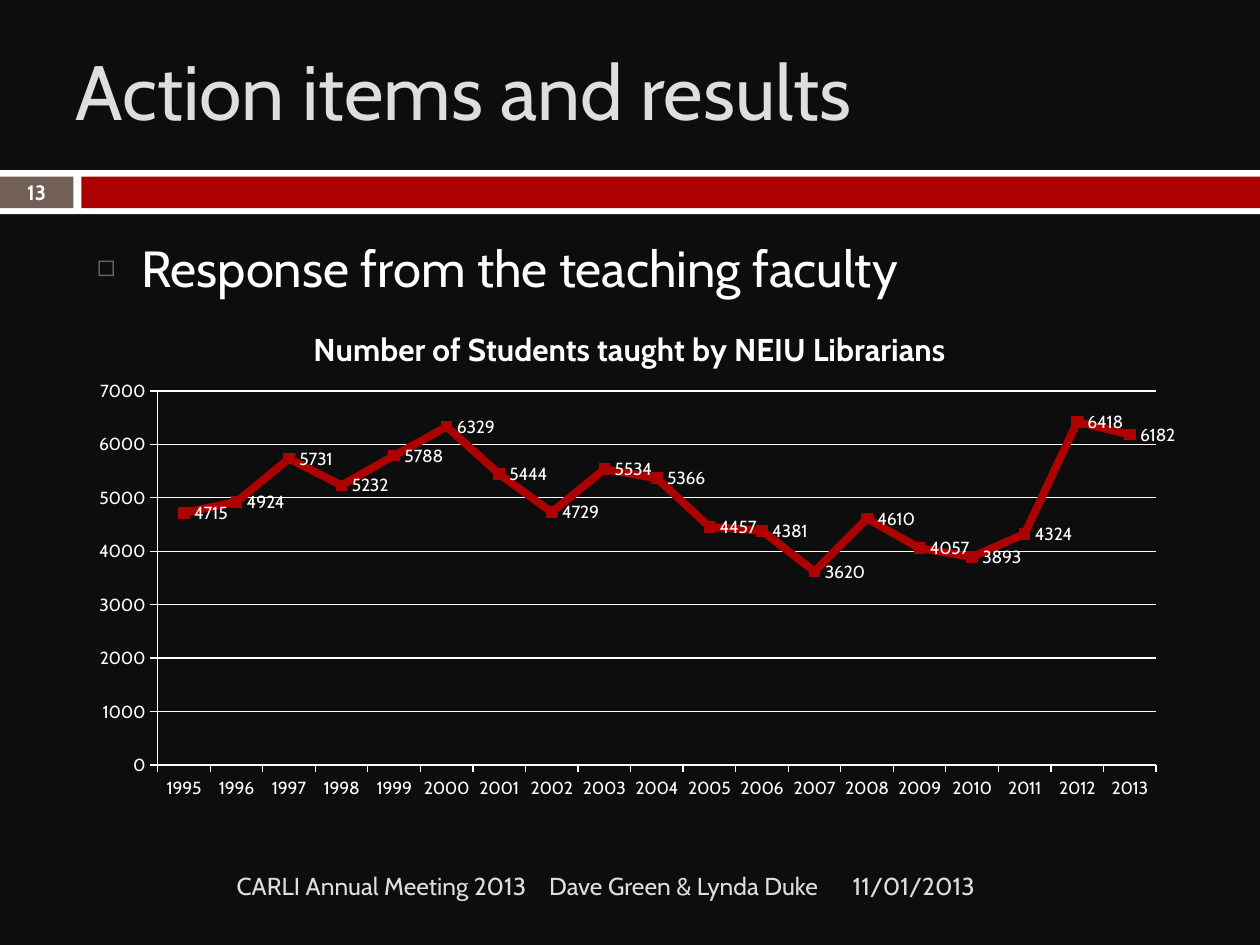
from lxml.etree import SubElement
from pptx import Presentation
from pptx.chart.data import CategoryChartData
from pptx.dml.color import RGBColor
from pptx.enum.chart import XL_CHART_TYPE as ChartType
from pptx.enum.chart import XL_LABEL_POSITION as LabelPosition
from pptx.enum.chart import XL_MARKER_STYLE as MarkerStyle
from pptx.enum.chart import XL_TICK_MARK as TickMark
from pptx.enum.shapes import MSO_SHAPE as ShapeType
from pptx.enum.text import MSO_ANCHOR as Anchor
from pptx.enum.text import MSO_AUTO_SIZE as AutoSize
from pptx.enum.text import PP_ALIGN as Align
from pptx.oxml.ns import qn
from pptx.util import Cm, Pt

FONT = "Cabin"
BLACK = RGBColor(0x0D, 0x0D, 0x0D)
WHITE = RGBColor(0xFF, 0xFF, 0xFF)
RED = RGBColor(0xAD, 0x01, 0x01)
BROWN = RGBColor(0x72, 0x60, 0x56)
GREY = RGBColor(0xDE, 0xDE, 0xE0)

YEARS = range(1995, 2014)
STUDENTS = [4715, 4924, 5731, 5232, 5788, 6329, 5444, 4729, 5534, 5366,
            4457, 4381, 3620, 4610, 4057, 3893, 4324, 6418, 6182]


def style_font(font, size, color, bold=False):
    font.name = FONT
    font.size = Pt(size)
    font.bold = bold
    font.color.rgb = color


def place(shape, left, top, width, height):
    shape.left, shape.top = Cm(left), Cm(top)
    shape.width, shape.height = Cm(width), Cm(height)


def write(shape, text, size, color, anchor=Anchor.MIDDLE, align=Align.LEFT,
          bold=False):
    """Fill the shape with one paragraph of one run and return the paragraph."""
    frame = shape.text_frame
    frame.word_wrap = True
    frame.auto_size = AutoSize.NONE
    frame.vertical_anchor = anchor
    paragraph = frame.paragraphs[0]
    paragraph.alignment = align
    run = paragraph.add_run()
    run.text = text
    style_font(run.font, size, color, bold)
    return paragraph


def add_bar(slide, left, top, width, height, color):
    bar = slide.shapes.add_shape(
        ShapeType.RECTANGLE, Cm(left), Cm(top), Cm(width), Cm(height))
    bar.shadow.inherit = False
    bar.fill.solid()
    bar.fill.fore_color.rgb = color
    bar.line.fill.background()


def add_label(slide, left, top, width, height, text, size, color, **options):
    box = slide.shapes.add_textbox(Cm(left), Cm(top), Cm(width), Cm(height))
    return write(box, text, size, color, **options)


def add_tab_stop(paragraph, position):
    tabs = SubElement(paragraph._p.get_or_add_pPr(), qn("a:tabLst"))
    SubElement(tabs, qn("a:tab"), pos=str(Cm(position)), algn="l")


def add_square_bullet(paragraph, indent):
    properties = paragraph._p.get_or_add_pPr()
    properties.set("marL", str(Cm(indent)))
    properties.set("indent", str(-Cm(indent)))
    color = SubElement(properties, qn("a:buClr"))
    SubElement(color, qn("a:srgbClr"), val=str(BROWN))
    SubElement(properties, qn("a:buSzPct"), val="60000")
    SubElement(properties, qn("a:buChar"), char="◻")


def set_plot_layout(chart, **fractions):
    """Fix the inner plot area as fractions of the chart."""
    plot_area = chart._chartSpace.chart.plotArea
    for old in plot_area.findall(qn("c:layout")):
        plot_area.remove(old)
    layout = plot_area.makeelement(qn("c:layout"), {})
    plot_area.insert(0, layout)
    manual = SubElement(layout, qn("c:manualLayout"))
    SubElement(manual, qn("c:layoutTarget"), val="inner")
    for mode in ("xMode", "yMode"):
        SubElement(manual, qn(f"c:{mode}"), val="edge")
    for name, fraction in fractions.items():
        SubElement(manual, qn(f"c:{name}"), val=str(fraction))


def style_line(line, color, width):
    line.color.rgb = color
    line.width = Pt(width)


def style_series(series):
    series.smooth = False
    style_line(series.format.line, RED, 4.5)
    series.marker.style = MarkerStyle.SQUARE
    series.marker.size = 6
    series.marker.format.fill.solid()
    series.marker.format.fill.fore_color.rgb = RED
    style_line(series.marker.format.line, RED, 0.75)
    labels = series.data_labels
    labels.show_value = True
    labels.position = LabelPosition.RIGHT
    style_font(labels.font, 10, WHITE)


def add_student_chart(slide):
    data = CategoryChartData()
    data.categories = [str(year) for year in YEARS]
    data.add_series("Series 1", STUDENTS)
    chart = slide.shapes.add_chart(
        ChartType.LINE_MARKERS, Cm(1.63), Cm(6.15), Cm(22.12), Cm(10.19), data).chart
    style_font(chart.font, 10, WHITE)
    chart.has_legend = False
    chart.has_title = True
    title_run = chart.chart_title.text_frame.paragraphs[0].add_run()
    title_run.text = "Number of Students taught by NEIU Librarians"
    style_font(title_run.font, 18, WHITE, bold=True)
    chart.chart_title.include_in_layout = False
    set_plot_layout(chart, x=0.07, y=0.17, w=0.91, h=0.74)

    for axis in (chart.category_axis, chart.value_axis):
        axis.major_tick_mark = TickMark.OUTSIDE
        axis.minor_tick_mark = TickMark.NONE
        style_line(axis.format.line, WHITE, 0.75)
    value_axis = chart.value_axis
    value_axis.minimum_scale, value_axis.maximum_scale = 0, 7000
    value_axis.major_unit = 1000
    value_axis.has_major_gridlines = True
    style_line(value_axis.major_gridlines.format.line, WHITE, 0.75)

    chart.plots[0].vary_by_categories = False
    style_series(chart.plots[0].series[0])


def main():
    presentation = Presentation()
    presentation.slide_width, presentation.slide_height = Cm(25.4), Cm(19.05)
    slide = presentation.slides.add_slide(presentation.slide_layouts[1])
    slide.background.fill.solid()
    slide.background.fill.fore_color.rgb = BLACK

    add_bar(slide, 0, 3.43, 25.4, 0.89, WHITE)
    add_bar(slide, 0, 3.56, 1.48, 0.64, BROWN)
    add_bar(slide, 1.64, 3.56, 23.76, 0.64, RED)
    add_label(slide, 0, 3.53, 1.48, 0.69, "13", 11.9, WHITE,
              align=Align.CENTER, bold=True)

    title, body = slide.shapes.title, slide.placeholders[1]
    place(title, 1.27, 0.43, 22.66, 2.74)
    write(title, "Action items and results", 44, GREY)
    place(body, 1.7, 4.65, 22.66, 12.5)
    item = write(body, "Response from the teaching faculty", 29, WHITE,
                 anchor=Anchor.TOP)
    item.space_before = Pt(7)
    add_square_bullet(item, 0.89)

    add_student_chart(slide)

    footer = add_label(slide, 4.52, 17.35, 12.24, 1.02,
                       "CARLI Annual Meeting 2013\tDave Green & Lynda Duke", 14, GREY)
    add_tab_stop(footer, 6.3)
    add_label(slide, 16.94, 17.35, 7.42, 1.02, "11/01/2013", 14, GREY)
    presentation.save("out.pptx")


if __name__ == "__main__":
    main()
